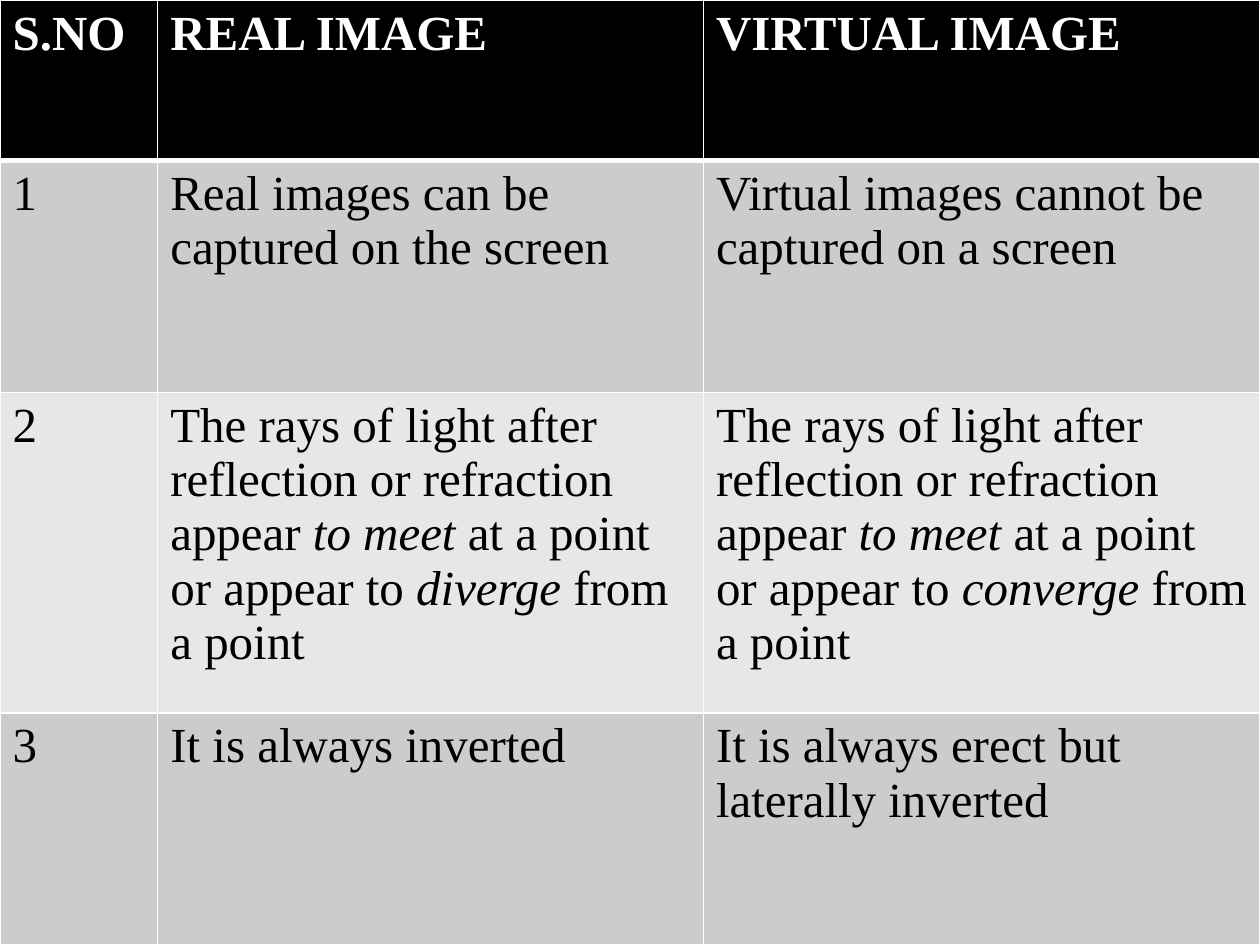
from lxml.etree import SubElement
from pptx import Presentation
from pptx.dml.color import RGBColor
from pptx.oxml.ns import qn
from pptx.util import Cm, Pt

BLACK = RGBColor(0x00, 0x00, 0x00)
WHITE = RGBColor(0xFF, 0xFF, 0xFF)
DARK_BAND = RGBColor(0xCC, 0xCC, 0xCC)
LIGHT_BAND = RGBColor(0xE7, 0xE7, 0xE7)

COLUMN_WIDTHS = (3.18, 11, 11.22)
ROW_HEIGHTS = (3.23, 4.68, 6.46, 4.68)


def ray_parts(verb):
    return (
        "The rays of light after reflection or refraction appear ",
        "to meet ",
        "at a point or appear to ",
        verb,
        " from a point",
    )


COMPARISON = (
    (("S.NO",), ("REAL IMAGE",), ("VIRTUAL IMAGE",)),
    (
        ("1",),
        ("Real images can be captured on the screen",),
        ("Virtual images cannot be captured on a screen",),
    ),
    (("2",), ray_parts("diverge"), ray_parts("converge")),
    (
        ("3",),
        ("It is always inverted",),
        ("It is always erect but laterally inverted",),
    ),
)


def add_span(para, text, *, font="Times New Roman", size=28, color=BLACK, bold=False, italic=False):
    span = para.add_run()
    span.text = text
    span.font.name = font
    span.font.size = Pt(size)
    span.font.color.rgb = color
    span.font.bold = bold
    span.font.italic = italic


def add_border(cell, side, width):
    line = SubElement(cell._tc.get_or_add_tcPr(), qn(f"a:ln{side}"), w=str(Pt(width)))
    fill = SubElement(line, qn("a:solidFill"))
    SubElement(fill, qn("a:srgbClr"), val=str(WHITE))


class SlideBuilder:
    def __init__(self, slide):
        self.slide = slide

    def table(self, rows, widths, heights):
        frame = self.slide.shapes.add_table(
            len(rows), len(widths), Cm(0), Cm(0), Cm(sum(widths)), Cm(sum(heights))
        )
        table = frame.table
        for column, width in zip(table.columns, widths):
            column.width = Cm(width)
        for row, height in zip(table.rows, heights):
            row.height = Cm(height)
        for row_number, row in enumerate(rows):
            for column_number, parts in enumerate(row):
                self.cell(table.cell(row_number, column_number), parts, row_number)

    def cell(self, cell, parts, row_number):
        header = row_number == 0
        border_widths = {"L": 1, "R": 1, "T": 3 if row_number == 1 else 1, "B": 3 if header else 1}
        for side, width in border_widths.items():
            add_border(cell, side, width)
        cell.fill.solid()
        band = DARK_BAND if row_number % 2 else LIGHT_BAND
        cell.fill.fore_color.rgb = BLACK if header else band
        para = cell.text_frame.paragraphs[0]
        for position, text in enumerate(parts):
            add_span(
                para,
                text,
                color=WHITE if header else BLACK,
                bold=header,
                italic=position % 2 == 1,
            )


def main():
    deck = Presentation()
    deck.slide_width = Cm(25.4)
    deck.slide_height = Cm(19.05)
    page = deck.slides.add_slide(deck.slide_layouts[6])
    SlideBuilder(page).table(COMPARISON, COLUMN_WIDTHS, ROW_HEIGHTS)
    deck.save("out.pptx")


if __name__ == "__main__":
    main()
